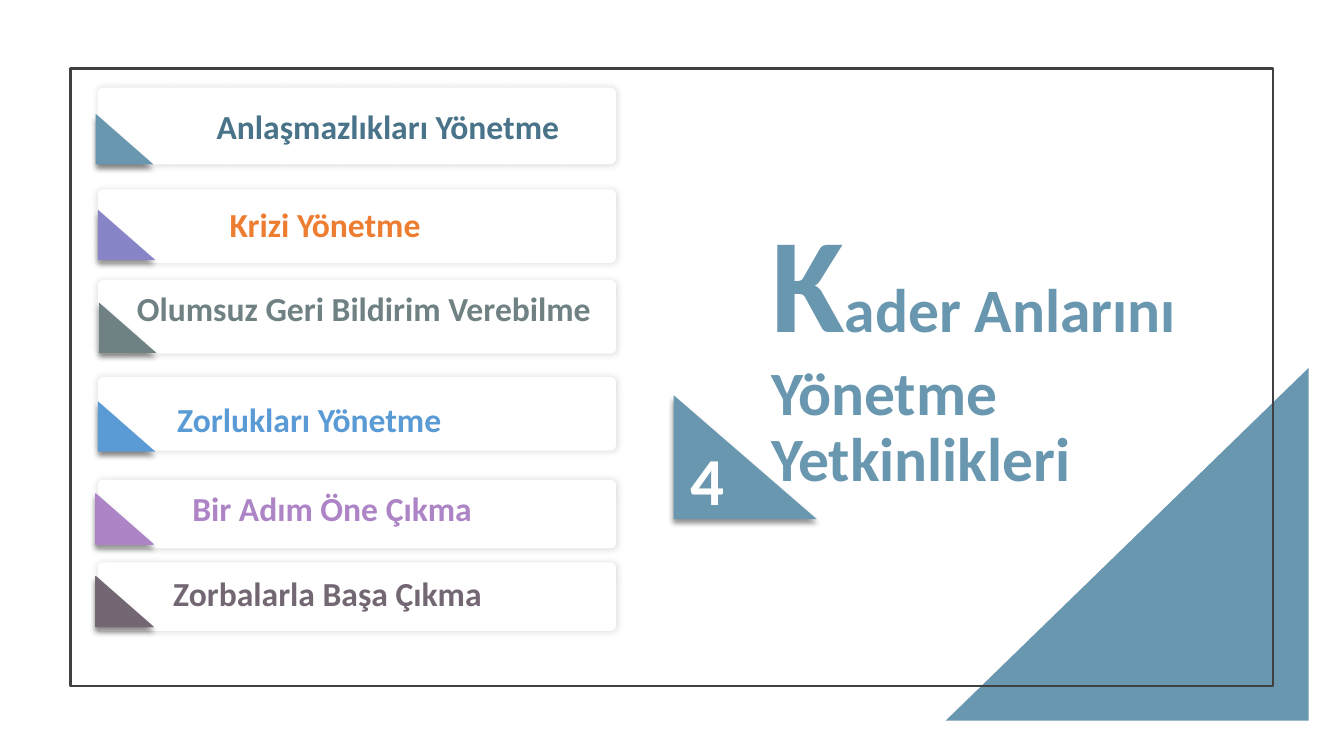
"""Build a slide listing six competency cards beside a numbered section title."""
from dataclasses import dataclass

from lxml.etree import SubElement
from pptx import Presentation
from pptx.dml.color import RGBColor
from pptx.enum.shapes import MSO_SHAPE
from pptx.enum.text import MSO_ANCHOR
from pptx.oxml.ns import qn
from pptx.shapes.autoshape import Shape
from pptx.slide import Slide
from pptx.text.text import TextFrame, _Paragraph
from pptx.util import Inches, Pt

FONT = "Calibri"
STEEL = "6997AF"
WHITE = "FFFFFF"
CARD_LEFT, CARD_WIDTH = 0.97, 5.14
CORNER_SIZE = (0.57, 0.5)
LABEL_HEIGHT = 0.5


@dataclass(frozen=True)
class Shadow:
    opacity: int
    blur: float
    distance: float
    angle: int


@dataclass(frozen=True)
class Card:
    text: str
    text_color: str
    corner_color: str
    top: float
    height: float
    corner_at: tuple[float, float]
    label_at: tuple[float, float]
    label_width: float
    outlined: bool = False


CARD_SHADOW = Shadow(14, 5, 0, 0)
CORNER_SHADOW = Shadow(43, 4, 3, 90)

CARDS = [
    Card("Anlaşmazlıkları Yönetme", "497389", STEEL, 0.87, 0.76, (0.95, 1.13), (2.05, 1), 3.89),
    Card("Krizi Yönetme", "ED7D31", "8784C7", 1.88, 0.73, (0.97, 2.08), (2.18, 1.97), 4.04),
    Card("Olumsuz Geri Bildirim Verebilme", "6F8183", "6F8183", 2.78, 0.73, (0.98, 3), (1.26, 2.81), 5.3),
    Card("Zorlukları Yönetme", "5B9BD5", "5B9BD5", 3.74, 0.73, (0.97, 3.98), (1.66, 3.91), 4.16),
    Card("Bir Adım Öne Çıkma", "AD84C6", "AD84C6", 4.76, 0.68, (0.95, 4.9), (1.81, 4.79), 4.4, True),
    Card("Zorbalarla Başa Çıkma", "736773", "736773", 5.58, 0.68, (0.95, 5.72), (1.62, 5.63), 4.4, True),
]


def color(code: str) -> RGBColor:
    return RGBColor.from_string(code)


def add_shadow(shape: Shape, shadow: Shadow) -> None:
    effects = shape._element.spPr.find(qn("a:effectLst"))
    outer = SubElement(
        effects, qn("a:outerShdw"), blurRad=str(Pt(shadow.blur)), dist=str(Pt(shadow.distance)),
        dir=str(shadow.angle * 60000), algn="ctr", rotWithShape="0",
    )
    tint = SubElement(outer, qn("a:srgbClr"), val="000000")
    SubElement(tint, qn("a:alpha"), val=str(shadow.opacity * 1000))


def add_box(page: Slide, kind: MSO_SHAPE, left: float, top: float, width: float, height: float,
            fill: str | None = None, line: str | None = None, line_width: float = 0.75,
            shadow: Shadow | None = None) -> Shape:
    box = page.shapes.add_shape(kind, Inches(left), Inches(top), Inches(width), Inches(height))
    box.shadow.inherit = False
    if fill:
        box.fill.solid()
        box.fill.fore_color.rgb = color(fill)
    else:
        box.fill.background()
    if line:
        box.line.color.rgb = color(line)
        box.line.width = Pt(line_width)
    else:
        box.line.fill.background()
    if shadow:
        add_shadow(box, shadow)
    return box


def add_frame(page: Slide, left: float, top: float, width: float, height: float) -> TextFrame:
    box = page.shapes.add_textbox(Inches(left), Inches(top), Inches(width), Inches(height))
    box.text_frame.word_wrap = True
    return box.text_frame


def add_span(para: _Paragraph, text: str, size: float, code: str) -> None:
    span = para.add_run()
    span.text = text
    span.font.name = FONT
    span.font.size = Pt(size)
    span.font.bold = True
    span.font.color.rgb = color(code)


def add_card(page: Slide, card: Card) -> None:
    panel = add_box(page, MSO_SHAPE.ROUNDED_RECTANGLE, CARD_LEFT, card.top, CARD_WIDTH, card.height,
                    fill=WHITE, shadow=CARD_SHADOW)
    panel.adjustments[0] = 0.073
    add_box(page, MSO_SHAPE.RIGHT_TRIANGLE, *card.corner_at, *CORNER_SIZE, fill=card.corner_color,
            line=card.corner_color if card.outlined else None, shadow=CORNER_SHADOW)
    label = add_frame(page, *card.label_at, card.label_width, LABEL_HEIGHT)
    add_span(label.paragraphs[0], card.text, 24, card.text_color)


def add_title(page: Slide) -> None:
    title = add_frame(page, 7.55, 3, 4.64, 1.96)
    title.vertical_anchor = MSO_ANCHOR.BOTTOM
    para = title.paragraphs[0]
    para.line_spacing = 0.9
    add_span(para, "K", 96, STEEL)
    add_span(para, "ader Anlarını Yönetme Yetkinlikleri", 44, STEEL)


def add_section_number(page: Slide) -> None:
    add_box(page, MSO_SHAPE.RIGHT_TRIANGLE, 6.68, 3.92, 1.42, 1.23, fill=STEEL, shadow=CORNER_SHADOW)
    number = add_frame(page, 6.75, 4.3, 0.33, 0.91)
    add_span(number.paragraphs[0], "4", 48, WHITE)


def main() -> None:
    deck = Presentation()
    deck.slide_width, deck.slide_height = Inches(13.33), Inches(7.5)
    page = deck.slides.add_slide(deck.slide_layouts[6])
    wedge = add_box(page, MSO_SHAPE.RIGHT_TRIANGLE, 9.38, 3.65, 3.6, 3.5, fill=STEEL)
    wedge._element.spPr.find(qn("a:xfrm")).set("flipH", "1")
    add_box(page, MSO_SHAPE.RECTANGLE, 0.7, 0.68, 11.93, 6.13, line="404040", line_width=1.5)
    add_title(page)
    for card in CARDS:
        add_card(page, card)
    add_section_number(page)
    deck.save("out.pptx")


if __name__ == "__main__":
    main()
